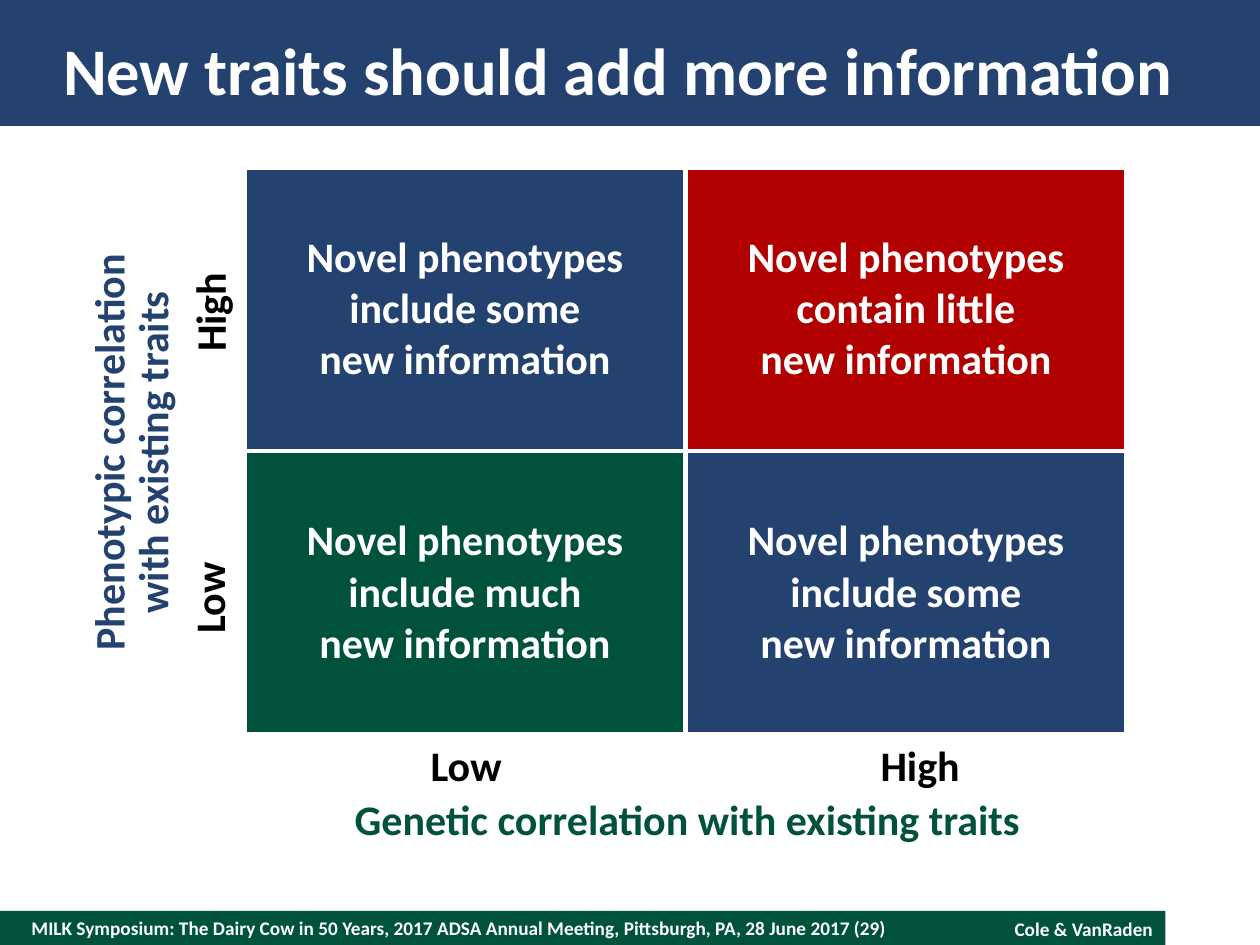
import pptx
import pptx.util
import pptx.oxml
import pptx.dml.color
import pptx.enum.text
import pptx.enum.shapes

TITLE = "New traits should add more information"
BANDS = [("blue", (0, 0, 1000, 100)), ("green", (0, 723, 925, 27))]
GRID = [
    [("include some", "blue"), ("contain little", "red")],
    [("include much", "green"), ("include some", "blue")],
]
HEAD, TAIL = "Novel phenotypes", "new information"
BOX = (194, 133, 700, 450)
TICKS = [
    ("Low", (332, 582, 77, 50), 0),
    ("High", (689, 582, 84, 50), 0),
    ("Low", (127, 449, 77, 50), 270),
    ("High", (124, 222, 84, 50), 270),
]
YAXIS = ["Phenotypic correlation", "with existing traits"]
XAXIS = ["Genetic correlation with existing traits"]
EVENT = ("MILK Symposium: The Dairy Cow in 50 Years, 2017 ADSA Annual Meeting, "
         "Pittsburgh, PA, 28 June 2017 (29)")
NAMES = "Cole & VanRaden"

THEME = {
    "font": "Calibri",
    "blue": "244270", "green": "00523C", "red": "B00000",
    "white": "FFFFFF", "black": "000000",
    "title": 38, "body": 24, "foot": 11, "pitch": 25, "rule": 3,
}
SCALE = 9144
ALIGN = pptx.enum.text.PP_ALIGN
MID = pptx.enum.text.MSO_ANCHOR.MIDDLE
FLUSH = dict.fromkeys(
    ["margin_left", "margin_top", "margin_right", "margin_bottom"], 0)


def px(vals):
    return [v * SCALE for v in vals]


def tint(name):
    return pptx.dml.color.RGBColor.from_string(THEME[name])


def style(item, form):
    for key, val in form.items():
        setattr(item, key, val)


def write(frame, lines, size, color, align=ALIGN.LEFT, pitch=None):
    frame.text = "\n".join(lines)
    for para in frame.paragraphs:
        style(para, {"alignment": align, "line_spacing": pitch})
        style(para.font, {"name": THEME["font"], "bold": True,
                          "size": pptx.util.Pt(THEME[size])})
        para.font.color.rgb = tint(color)


def label(slide, lines, box, size, color, turn=0, wrap=True, form={}, **kw):
    shape = slide.shapes.add_textbox(*px(box))
    shape.rotation = turn
    style(shape.text_frame, {"word_wrap": wrap, **form})
    write(shape.text_frame, lines, size, color, **kw)


def border(cell):
    props = cell._tc.get_or_add_tcPr()
    for side in "LRTB":
        props.append(pptx.oxml.parse_xml(
            f'<a:ln{side} xmlns:a="http://schemas.openxmlformats.org/drawingml/2006/main"'
            f' w="{pptx.util.Pt(THEME["rule"])}"><a:solidFill>'
            f'<a:srgbClr val="{THEME["white"]}"/></a:solidFill></a:ln{side}>'))


def matrix(slide):
    rows, cols = len(GRID), len(GRID[0])
    table = slide.shapes.add_table(rows, cols, *px(BOX)).table
    style(table, {"first_row": False, "horz_banding": False})
    for r, row in enumerate(GRID):
        for c, (text, color) in enumerate(row):
            cell = table.cell(r, c)
            border(cell)
            style(cell, {**FLUSH, "vertical_anchor": MID})
            cell.fill.solid()
            cell.fill.fore_color.rgb = tint(color)
            write(cell.text_frame, [HEAD, text, TAIL], "body", "white",
                  ALIGN.CENTER)


def main():
    deck = pptx.Presentation()
    style(deck, dict(zip(["slide_width", "slide_height"], px((1000, 750)))))
    slide = deck.slides.add_slide(deck.slide_layouts[5])
    title = slide.shapes.title

    for color, box in BANDS:
        band = slide.shapes.add_shape(
            pptx.enum.shapes.MSO_SHAPE.RECTANGLE, *px(box))
        band.shadow.inherit = False
        band.fill.solid()
        band.fill.fore_color.rgb = tint(color)
        band.line.fill.background()

    slide.shapes._spTree.append(title._element)
    style(title, dict(zip(["left", "top", "width", "height"],
                          px((50, 20, 900, 70)))))
    style(title.text_frame, {
        **FLUSH, "vertical_anchor": MID, "word_wrap": True,
        "auto_size": pptx.enum.text.MSO_AUTO_SIZE.NONE})
    write(title.text_frame, [TITLE], "title", "white")

    label(slide, [EVENT], (25, 723, 700, 27), "foot", "white",
          form={**FLUSH, "vertical_anchor": MID})
    label(slide, [NAMES], (725, 723, 200, 29), "foot", "white",
          align=ALIGN.RIGHT)
    for text, box, turn in TICKS:
        label(slide, [text], box, "body", "black", turn, wrap=False)
    label(slide, YAXIS, (-140, 319, 492, 80), "body", "blue", 270,
          align=ALIGN.CENTER, pitch=pptx.util.Pt(THEME["pitch"]))
    matrix(slide)
    label(slide, XAXIS, (215, 625, 661, 50), "body", "green",
          align=ALIGN.CENTER)
    deck.save("out.pptx")


if __name__ == "__main__":
    main()
